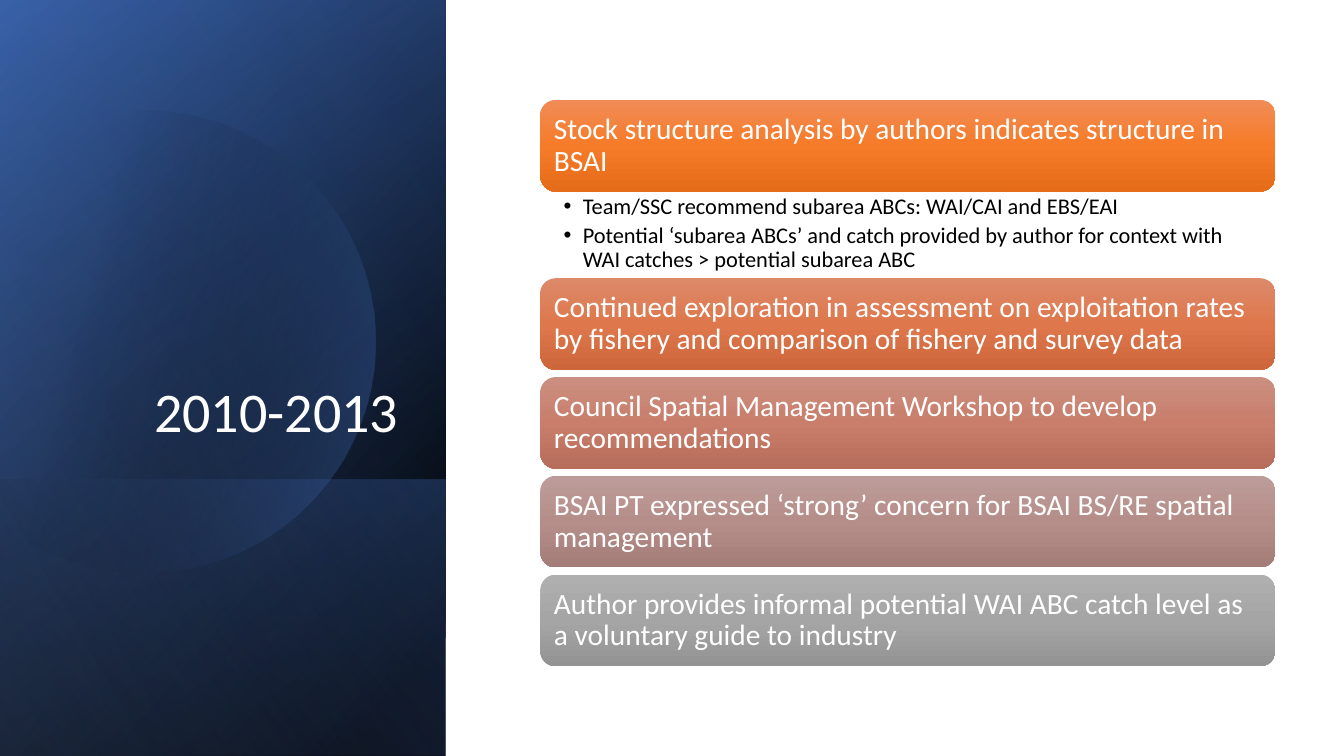
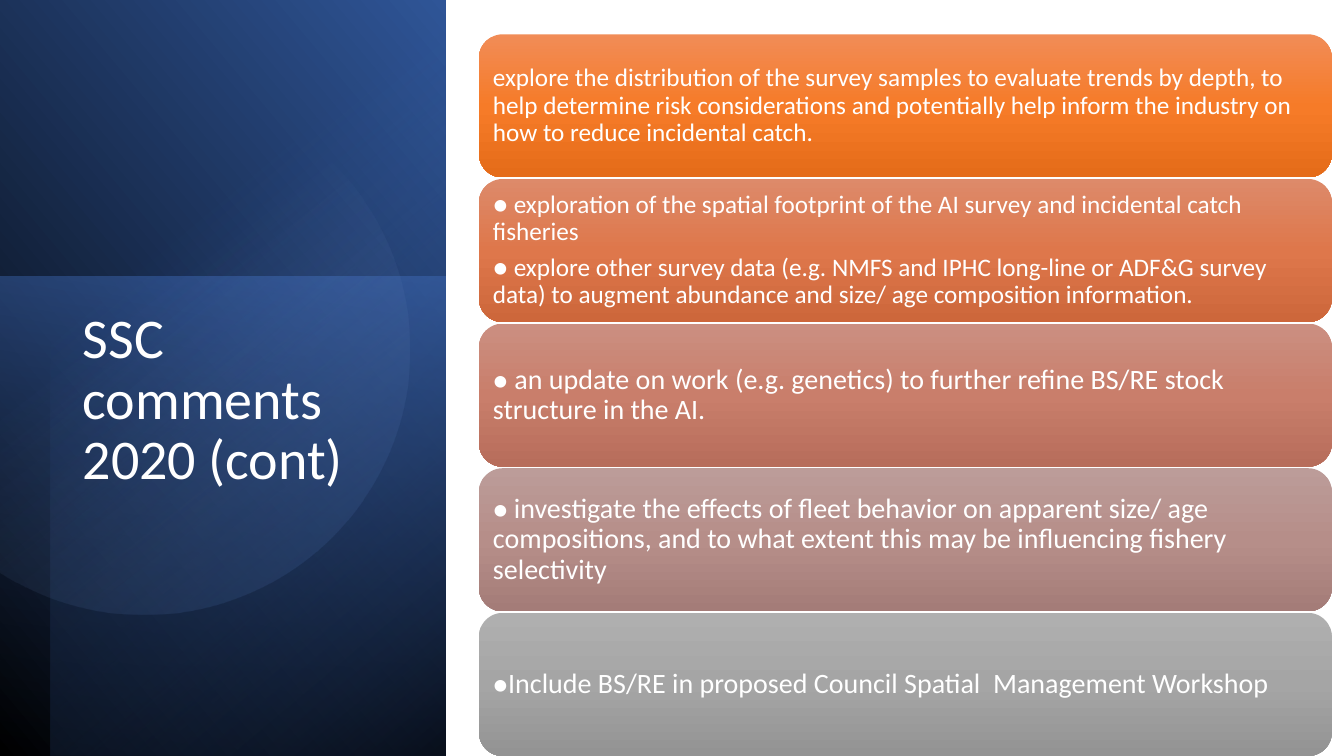
"""Build two slides with a dark gradient side panel and a column of gradient cards."""
import math

from lxml import etree
from pptx import Presentation
from pptx import util as u
from pptx.dml.color import RGBColor
from pptx.enum import shapes, text
from pptx.oxml.ns import qn

PX = 9144
SLIDE_W, SLIDE_H = 1333, 750
FONT = "Calibri"

BLACK = RGBColor(0x00, 0x00, 0x00)
WHITE = RGBColor(0xFF, 0xFF, 0xFF)
BLUE = RGBColor(0x44, 0x72, 0xC4)
DEEP_BLUE = RGBColor(0x2F, 0x55, 0x97)
NAVY = RGBColor(0x20, 0x38, 0x64)
PALE_BLUE = RGBColor(0x8F, 0xAA, 0xDC)

CARD_GRADIENTS = [
    [(pos, RGBColor.from_string(shade), 100) for pos, shade in zip((0, 50, 100), shades)]
    for shades in (
        ("F18C57", "F67B28", "E56C19"),
        ("DD8A6A", "DE774B", "CD673B"),
        ("CB8F81", "C97E6B", "B76D5B"),
        ("BC9C99", "B68E89", "A47C78"),
        ("AFAFAF", "A5A5A5", "939393"),
    )
]

SIDE = (0, 0, 442, 750)


def evenly(first, last, count):
    return [first + (last - first) * i / (count - 1) for i in range(count)]


SLIDES = [
    {
        "title": "2010-2013",
        "title_box": (64, 184, 341, 262),
        "title_style": (text.PP_ALIGN.RIGHT, text.MSO_ANCHOR.BOTTOM),
        "backdrop": [
            ("panel", SIDE, 90, True, [(8, BLACK, 100), (100, DEEP_BLUE, 100)], 50),
            ("panel", SIDE, 90, True, [(0, BLACK, 0), (99, BLUE, 46)], 30),
            ("panel", (0, 476, 442, 274), 90, True, [(2, BLUE, 29), (100, BLACK, 30)], 130),
            ("disc", (143, 339, 229, -15), [(29, BLACK, 0), (100, BLUE, 43)], 14),
            ("panel", SIDE, 90, True, [(0, BLACK, 0), (99, PALE_BLUE, 11)], 120),
        ],
        "cards": [
            [[("Stock structure analysis by authors indicates structure in BSAI", 21)]],
            [[("Continued exploration in assessment on exploitation rates by fishery "
               "and comparison of fishery and survey data", 21)]],
            [[("Council Spatial Management Workshop to develop recommendations", 21)]],
            [[("BSAI PT expressed ‘strong’ concern for BSAI BS/RE spatial management", 21)]],
            [[("Author provides informal potential WAI ABC catch level as a voluntary "
               "guide to industry", 21)]],
        ],
        "card_size": (536, 729, 91),
        "card_tops": [99] + evenly(276, 570, 4),
        "card_inset": 9,
        "bullets": [
            [("Team/SSC recommend subarea ABCs: WAI/CAI and EBS/EAI", 16)],
            [("Potential ‘subarea ABCs’ and catch provided by author for context with "
              "WAI catches > potential subarea ABC", 16)],
        ],
        "bullets_box": (536, 191, 729, 86),
    },
    {
        "title": "SSC comments 2020 (cont)",
        "title_box": (72, 303, 315, 336),
        "title_style": (text.PP_ALIGN.LEFT, text.MSO_ANCHOR.TOP),
        "backdrop": [
            ("panel", SIDE, 90, True, [(0, BLACK, 100), (100, DEEP_BLUE, 100)], 310),
            ("panel", (0, 274, 442, 476), 270, False, [(0, BLUE, 50), (100, NAVY, 0)], 190),
            ("panel", (50, 0, 392, 750), 270, True, [(0, BLACK, 59), (69, BLUE, 0)], 220),
            ("disc", (143, 347, 263, 0), [(39, PALE_BLUE, 0), (100, DEEP_BLUE, 26)], 52),
        ],
        "cards": [
            [[("explore the distribution of the survey samples to evaluate trends by depth, "
               "to help determine risk considerations and potentially help inform the "
               "industry on how to reduce incidental catch.", 18)]],
            [[("● exploration of the spatial footprint of the AI survey and incidental "
               "catch fisheries", 18)],
             [("● explore other survey data (e.g. NMFS and IPHC long-line or ADF&G survey "
               "data) to augment abundance and size/ age composition information.", 18)]],
            [[("●", 18),
              (" an update on work (e.g. genetics) to further refine BS/RE stock structure "
               "in the AI.", 20)]],
            [[("● ", 18),
              ("investigate the effects of fleet behavior on apparent size/ age compositions, "
               "and to what extent this may be influencing fishery selectivity", 20)]],
            [[("●", 18),
              ("Include BS/RE in proposed Council Spatial  Management Workshop", 20)]],
        ],
        "card_size": (475, 846, 142),
        "card_tops": evenly(34, 608, 5),
        "card_inset": 7,
        "bullets": [],
        "bullets_box": None,
    },
]


def emu(*lengths):
    return [u.Emu(round(length * PX)) for length in lengths]


def paint(shape, stops, angle):
    shape.shadow.inherit = False
    shape.line.fill.background()
    shape.fill.gradient()
    gradient = shape._element.spPr.find(qn("a:gradFill"))
    for child in list(gradient):
        gradient.remove(child)
    stop_list = etree.SubElement(gradient, qn("a:gsLst"))
    for position, color, opacity in stops:
        stop = etree.SubElement(stop_list, qn("a:gs"), pos=str(position * 1000))
        shade = etree.SubElement(stop, qn("a:srgbClr"), val=str(color))
        if opacity < 100:
            etree.SubElement(shade, qn("a:alpha"), val=str(opacity * 1000))
    etree.SubElement(gradient, qn("a:lin"), ang=str(angle * 60000), scaled="0")


def add_panel(slide, box, turn, flipped, stops, angle):
    left, top, width, height = box
    shift = (width - height) / 2
    panel = slide.shapes.add_shape(
        shapes.MSO_SHAPE.RECTANGLE, *emu(left + shift, top - shift, height, width))
    panel.rotation = turn
    if flipped:
        panel._element.spPr.xfrm.set("flipH", "1")
    paint(panel, stops, angle)


def add_disc(slide, circle, stops, angle):
    center_x, center_y, radius, cut_x = circle
    reach = math.acos((cut_x - center_x) / radius)
    rim = [emu(center_x + radius * math.cos(a), center_y + radius * math.sin(a))
           for a in evenly(-reach, reach, 121)]
    outline = slide.shapes.build_freeform(*rim[0])
    outline.add_line_segments(rim[1:], close=True)
    paint(outline.convert_to_shape(), stops, angle)


def write(frame, paragraphs, color, align=text.PP_ALIGN.LEFT, space=0.0):
    frame.word_wrap = True
    frame.auto_size = text.MSO_AUTO_SIZE.NONE
    for i, runs in enumerate(paragraphs):
        paragraph = frame.add_paragraph() if i else frame.paragraphs[0]
        paragraph.alignment = align
        paragraph.line_spacing = 0.9
        paragraph.space_before = u.Pt(0)
        paragraph.space_after = u.Pt(round(runs[0][1] * space))
        for words, size in runs:
            run = paragraph.add_run()
            run.text = words
            run.font.name = FONT
            run.font.size = u.Pt(size)
            run.font.color.rgb = color


def set_insets(frame, left, top, right, bottom):
    (frame.margin_left, frame.margin_top,
     frame.margin_right, frame.margin_bottom) = emu(left, top, right, bottom)


def add_title(slide, words, box, style):
    title = slide.shapes.title
    title.left, title.top, title.width, title.height = emu(*box)
    align, anchor = style
    write(title.text_frame, [[(words, 40)]], WHITE, align)
    title.text_frame.vertical_anchor = anchor
    slide.shapes._spTree.append(title._element)


def add_card(slide, box, inset, paragraphs, stops):
    card = slide.shapes.add_shape(shapes.MSO_SHAPE.ROUNDED_RECTANGLE, *emu(*box))
    paint(card, stops, 90)
    set_insets(card.text_frame, *[inset] * 4)
    card.text_frame.vertical_anchor = text.MSO_ANCHOR.MIDDLE
    write(card.text_frame, paragraphs, WHITE, space=0.35)


def add_bullets(slide, box, items):
    frame = slide.shapes.add_textbox(*emu(*box)).text_frame
    set_insets(frame, 23, 3, 16, 3)
    write(frame, items, BLACK, space=0.2)
    indent = 19 * PX
    for paragraph in frame.paragraphs:
        properties = paragraph._p.get_or_add_pPr()
        properties.set("marL", str(indent))
        properties.set("indent", str(-indent))
        etree.SubElement(properties, qn("a:buFont"), typeface="Arial")
        etree.SubElement(properties, qn("a:buChar"), char="•")


def build_slide(deck, content):
    slide = deck.slides.add_slide(deck.slide_layouts[5])
    draw = {"panel": add_panel, "disc": add_disc}
    for part, *details in content["backdrop"]:
        draw[part](slide, *details)
    add_title(slide, content["title"], content["title_box"], content["title_style"])
    left, width, height = content["card_size"]
    for top, paragraphs, stops in zip(content["card_tops"], content["cards"], CARD_GRADIENTS):
        add_card(slide, (left, top, width, height), content["card_inset"], paragraphs, stops)
    if content["bullets"]:
        add_bullets(slide, content["bullets_box"], content["bullets"])


def main():
    deck = Presentation()
    deck.slide_width, deck.slide_height = emu(SLIDE_W, SLIDE_H)
    for content in SLIDES:
        build_slide(deck, content)
    deck.save("out.pptx")


if __name__ == "__main__":
    main()
